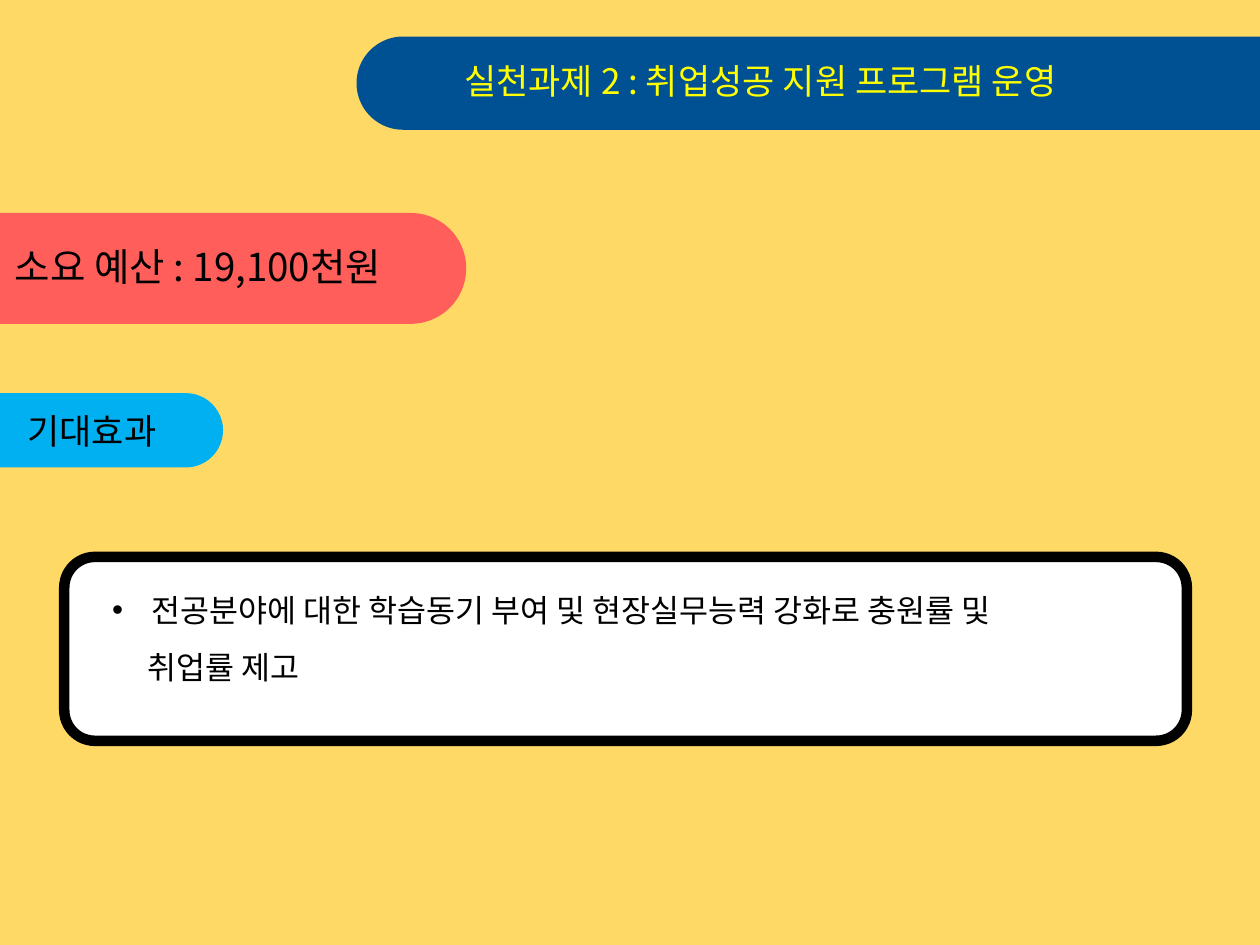
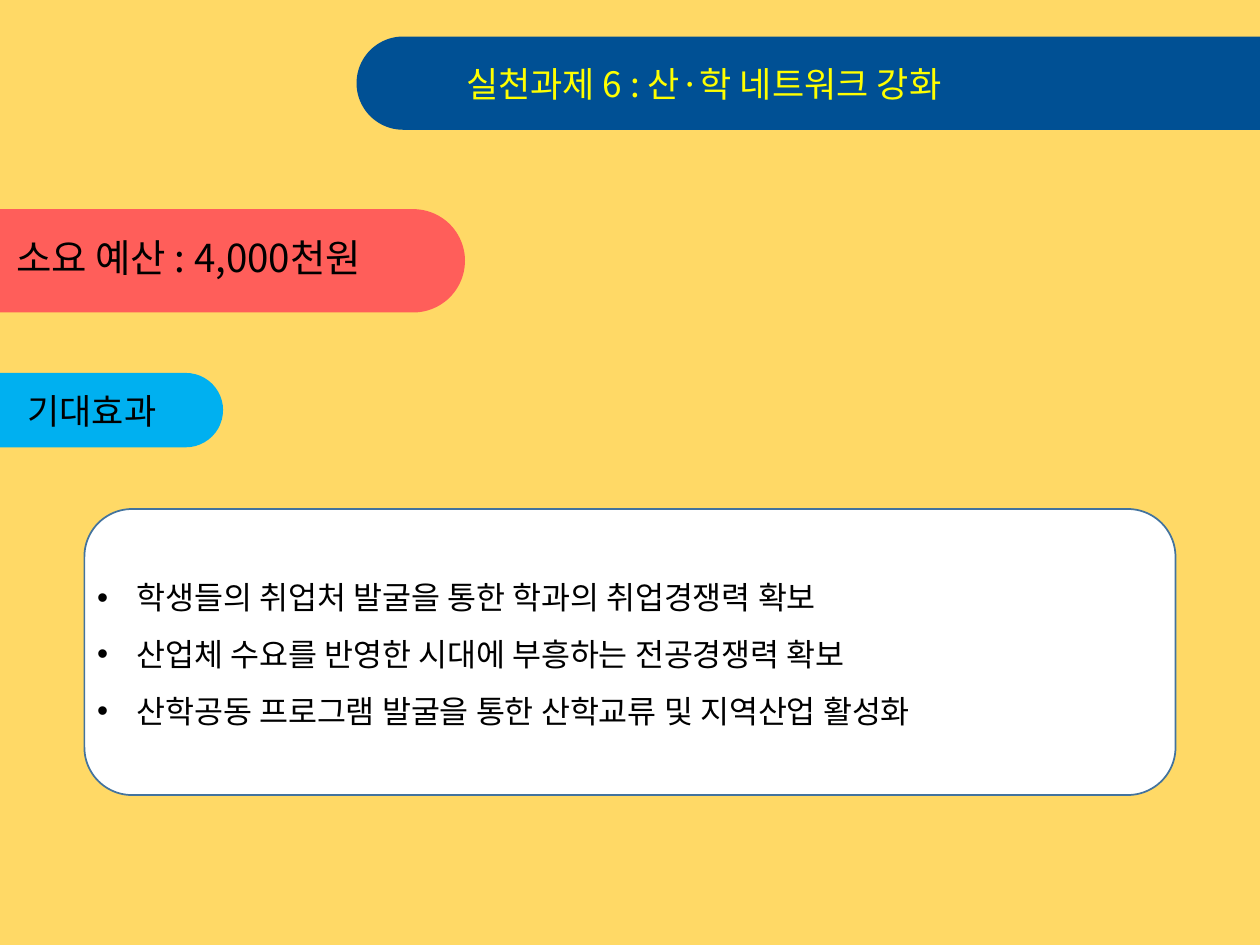
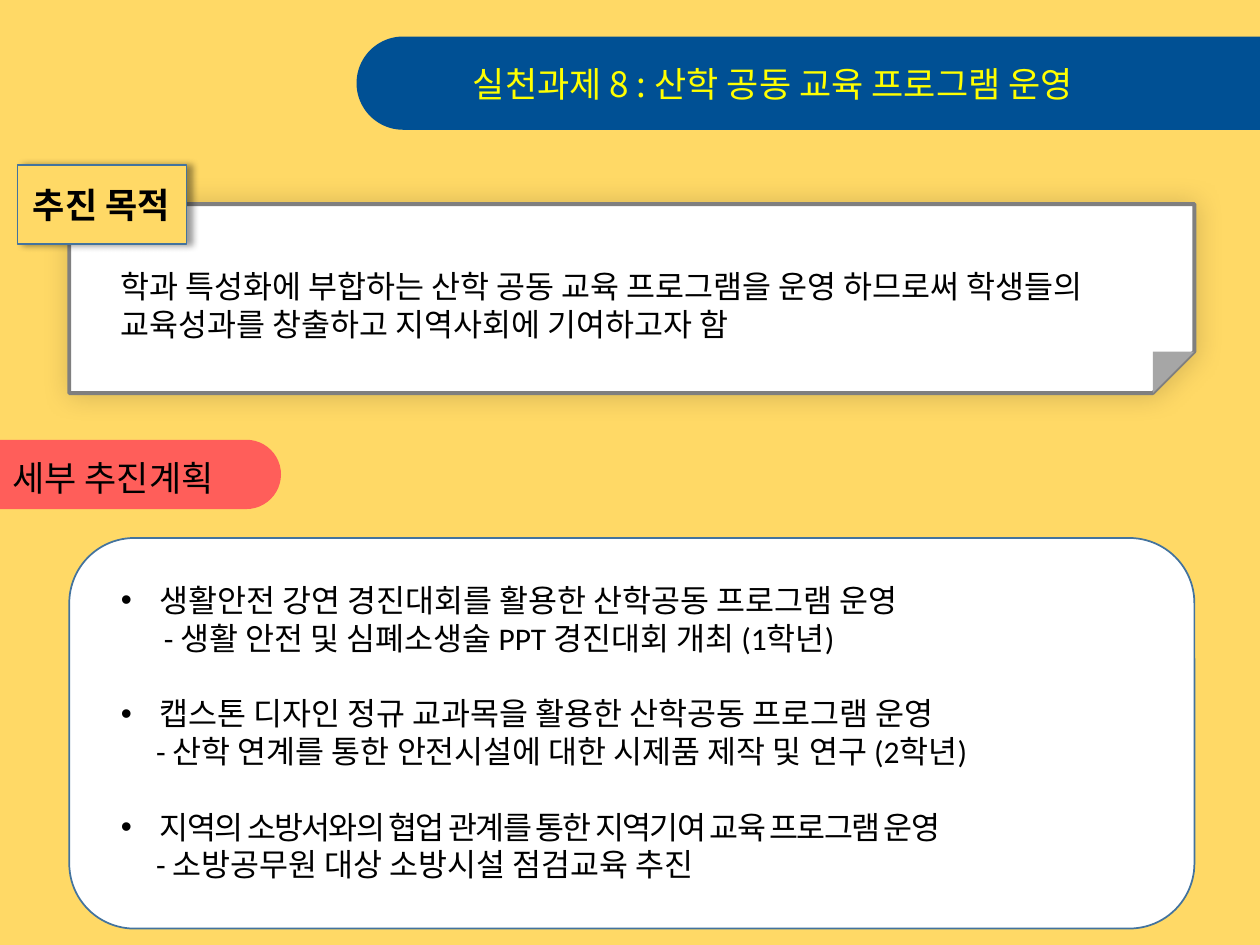
"""Build three slides on the practice tasks of a department's job programme."""
from lxml.etree import SubElement
from pptx import Presentation
from pptx.dml.color import RGBColor
from pptx.enum.shapes import MSO_SHAPE as Shape
from pptx.enum.text import MSO_ANCHOR as Anchor, MSO_AUTO_SIZE as AutoSize, PP_ALIGN as Align
from pptx.oxml.ns import qn
from pptx.util import Inches, Pt

YELLOW = RGBColor(0xFF, 0xD9, 0x66)
NAVY = RGBColor(0x00, 0x50, 0x94)
TITLE_YELLOW = RGBColor(0xFF, 0xFF, 0x00)
RED = RGBColor(0xFF, 0x5E, 0x5A)
SKY = RGBColor(0x00, 0xB0, 0xF0)
WHITE = RGBColor(0xFF, 0xFF, 0xFF)
BLACK = RGBColor(0x00, 0x00, 0x00)
EDGE_BLUE = RGBColor(0x43, 0x73, 0x9E)
EDGE_GRAY = RGBColor(0x7F, 0x7F, 0x7F)
FOLD_GRAY = RGBColor(0xA6, 0xA6, 0xA6)
KOREAN = "Noto Sans CJK KR"
BULLET_INDENT = 0.31
BLANK_LINE = 21.6

PURPOSE_LABEL = "추진 목적"
PURPOSE = "학과 특성화에 부합하는 산학 공동 교육 프로그램을 운영 하므로써 학생들의 교육성과를 창출하고 지역사회에 기여하고자 함"

# Each list line: text, left indent (None for a bullet), space before, letter spacing
SLIDES = [
    {
        "title": ("실천과제 2 : 취업성공 지원 프로그램 운영", (2.69, 0.42)),
        "tabs": [
            ("소요 예산 : 19,100천원", 22, RED, (0, 1.69, 3.7, 0.88), (0.02, 1.88)),
            ("기대효과", 20, SKY, (0, 3.12, 1.77, 0.59), (0.12, 3.2)),
        ],
        "card": ((0.51, 4.42, 8.91, 1.46), BLACK, 6),
        "list": ((0.79, 4.49, 9.06, 1.01), KOREAN, 1.5, [
            ("전공분야에 대한 학습동기 부여 및 현장실무능력 강화로 충원률 및", None, 0, 0),
            ("취업률 제고", 0.28, 0, 0),
        ]),
    },
    {
        "title": ("실천과제 6 : 산·학 네트워크 강화", (2.24, 0.44)),
        "tabs": [
            ("소요 예산 : 4,000천원", 22, RED, (0, 1.66, 3.69, 0.82), (0.03, 1.81)),
            ("기대효과", 20, SKY, (0, 2.96, 1.77, 0.59), (0.12, 3.04)),
        ],
        "card": ((0.67, 4.04, 8.66, 2.27), EDGE_BLUE, 1),
        "list": ((0.67, 4.39, 8.66, 1.82), "Arial", 1.5, [
            ("학생들의 취업처 발굴을 통한 학과의 취업경쟁력 확보", None, 0, 0),
            ("산업체 수요를 반영한 시대에 부흥하는 전공경쟁력 확보", None, 0, 0),
            ("산학공동 프로그램 발굴을 통한 산학교류 및 지역산업 활성화", None, 0, 0),
        ]),
    },
    {
        "title": ("실천과제 8 : 산학 공동 교육 프로그램 운영", (2.79, 0.44)),
        "tabs": [("세부 추진계획", 20, RED, (0, 3.49, 2.23, 0.55), (0, 3.57))],
        "card": ((0.55, 4.27, 8.93, 3.1), EDGE_BLUE, 1),
        "list": ((0.86, 4.56, 7.65, 2.52), "Calibri", 1.0, [
            ("생활안전 강연 경진대회를 활용한 산학공동 프로그램 운영", None, 0, 0),
            ("- 생활 안전 및 심폐소생술 PPT 경진대회 개최 (1학년)", 0.34, 0, 0),
            ("캡스톤 디자인 정규 교과목을 활용한 산학공동 프로그램 운영", None, BLANK_LINE, 0),
            ("- 산학 연계를 통한 안전시설에 대한 시제품 제작 및 연구 (2학년)", 0.28, 0, 0),
            ("지역의 소방서와의 협업 관계를 통한 지역기여 교육 프로그램 운영", None, BLANK_LINE, -1),
            ("- 소방공무원 대상 소방시설 점검교육 추진", 0.28, 0, 0),
        ]),
    },
]


def place(shape, box):
    shape.left, shape.top, shape.width, shape.height = map(Inches, box)


def style_text(paragraph, size, color=BLACK, font_name=KOREAN, bold=False, spacing=0):
    for run in paragraph.runs:
        font = run.font
        font.size, font.bold, font.name = Pt(size), bold, font_name
        font.color.rgb = color
        properties = run._r.get_or_add_rPr()
        properties.set("spc", str(spacing * 100))
        SubElement(properties, qn("a:ea"), typeface=KOREAN)


def paint(shape, fill, line=None, line_width=1):
    shape.shadow.inherit = False
    shape.fill.solid()
    shape.fill.fore_color.rgb = fill
    if line is None:
        shape.line.fill.background()
    else:
        shape.line.color.rgb = line
        shape.line.width = Pt(line_width)


def add_shadow(shape, opacity, blur, distance):
    effects = shape.element.spPr.find(qn("a:effectLst"))
    shadow = SubElement(effects, qn("a:outerShdw"), blurRad=str(Pt(blur)),
                        dist=str(Pt(distance)), dir="0", algn="ctr", rotWithShape="0")
    color = SubElement(shadow, qn("a:srgbClr"), val=str(BLACK))
    SubElement(color, qn("a:alpha"), val=str(opacity * 1000))


def add_box(slide, kind, box, fill, line=None, line_width=1):
    shape = slide.shapes.add_shape(kind, *map(Inches, box))
    paint(shape, fill, line, line_width)
    return shape


def add_pill(slide, box, fill, rotation):
    left, top, width, height = box
    shift = (width - height) / 2
    pill = add_box(slide, Shape.ROUND_2_SAME_RECTANGLE,
                   (left + shift, top - shift, height, width), fill)
    pill.adjustments[0], pill.adjustments[1] = 0.5, 0
    pill.rotation = rotation
    return pill


def add_label(slide, text, box, size, align=Align.LEFT, **style):
    frame = slide.shapes.add_textbox(*map(Inches, box)).text_frame
    frame.word_wrap = True
    frame.text = text
    frame.paragraphs[0].alignment = align
    style_text(frame.paragraphs[0], size, **style)


def add_title(slide, text, position):
    title = slide.shapes.title
    title.element.addprevious(add_pill(slide, (2.83, 0.29, 7.17, 0.74), NAVY, 270).element)
    place(title, (*position, 6.69, 0.44))
    frame = title.text_frame
    frame.text = text
    frame.auto_size = AutoSize.NONE
    frame.paragraphs[0].alignment = Align.CENTER
    style_text(frame.paragraphs[0], 20, TITLE_YELLOW)


def add_list(slide, box, font_name, line_spacing, lines):
    body = slide.placeholders[1]
    slide.shapes.element.append(body.element)
    place(body, box)
    frame = body.text_frame
    frame.auto_size = AutoSize.NONE
    frame.vertical_anchor = Anchor.TOP
    frame.text = "\n".join(line[0] for line in lines)
    for paragraph, (_, indent, space_before, spacing) in zip(frame.paragraphs, lines):
        bulleted = indent is None
        properties = paragraph._p.get_or_add_pPr()
        properties.set("marL", str(Inches(BULLET_INDENT if bulleted else indent)))
        properties.set("indent", str(Inches(-BULLET_INDENT if bulleted else 0)))
        if bulleted:
            SubElement(properties, qn("a:buFont"), typeface="Arial")
            SubElement(properties, qn("a:buChar"), char="•")
        else:
            SubElement(properties, qn("a:buNone"))
        paragraph.line_spacing = line_spacing
        paragraph.space_before = Pt(space_before)
        style_text(paragraph, 18, font_name=font_name, spacing=spacing)


def add_purpose_note(slide):
    left, top, right, bottom, fold = 0.55, 1.62, 9.48, 3.12, 0.33
    builder = slide.shapes.build_freeform(Inches(left), Inches(top))
    corners = [(right, top), (right, bottom - fold), (right - fold, bottom), (left, bottom)]
    builder.add_line_segments([(Inches(x), Inches(y)) for x, y in corners], close=True)
    paper = builder.convert_to_shape()
    paint(paper, WHITE, EDGE_GRAY, 2.25)
    add_shadow(paper, 17, 15, 0)
    corner = add_box(slide, Shape.RIGHT_TRIANGLE,
                     (right - fold, bottom - fold, fold, fold), FOLD_GRAY)
    corner.rotation = 90
    add_label(slide, PURPOSE, (0.86, 2.07, 8.47, 0.71), 18, font_name="Calibri")
    tag = add_box(slide, Shape.RECTANGLE, (0.14, 1.31, 1.34, 0.63), YELLOW, EDGE_BLUE)
    add_shadow(tag, 40, 4, 3)
    add_label(slide, PURPOSE_LABEL, (-0.2, 1.41, 2.01, 0.44), 20, Align.CENTER, bold=True)


def main():
    presentation = Presentation()
    presentation.slide_width, presentation.slide_height = Inches(10), Inches(7.5)
    background = presentation.slide_master.background.fill
    background.solid()
    background.fore_color.rgb = YELLOW
    for content in SLIDES:
        slide = presentation.slides.add_slide(presentation.slide_layouts[1])
        add_title(slide, *content["title"])
        for text, size, fill, box, position in content["tabs"]:
            add_pill(slide, box, fill, 90)
            add_label(slide, text, (*position, 3.68, 0.47), size)
        card_box, edge, edge_width = content["card"]
        add_box(slide, Shape.ROUNDED_RECTANGLE, card_box, WHITE, edge, edge_width)
        add_list(slide, *content["list"])
    add_purpose_note(slide)
    presentation.save("out.pptx")


if __name__ == "__main__":
    main()
